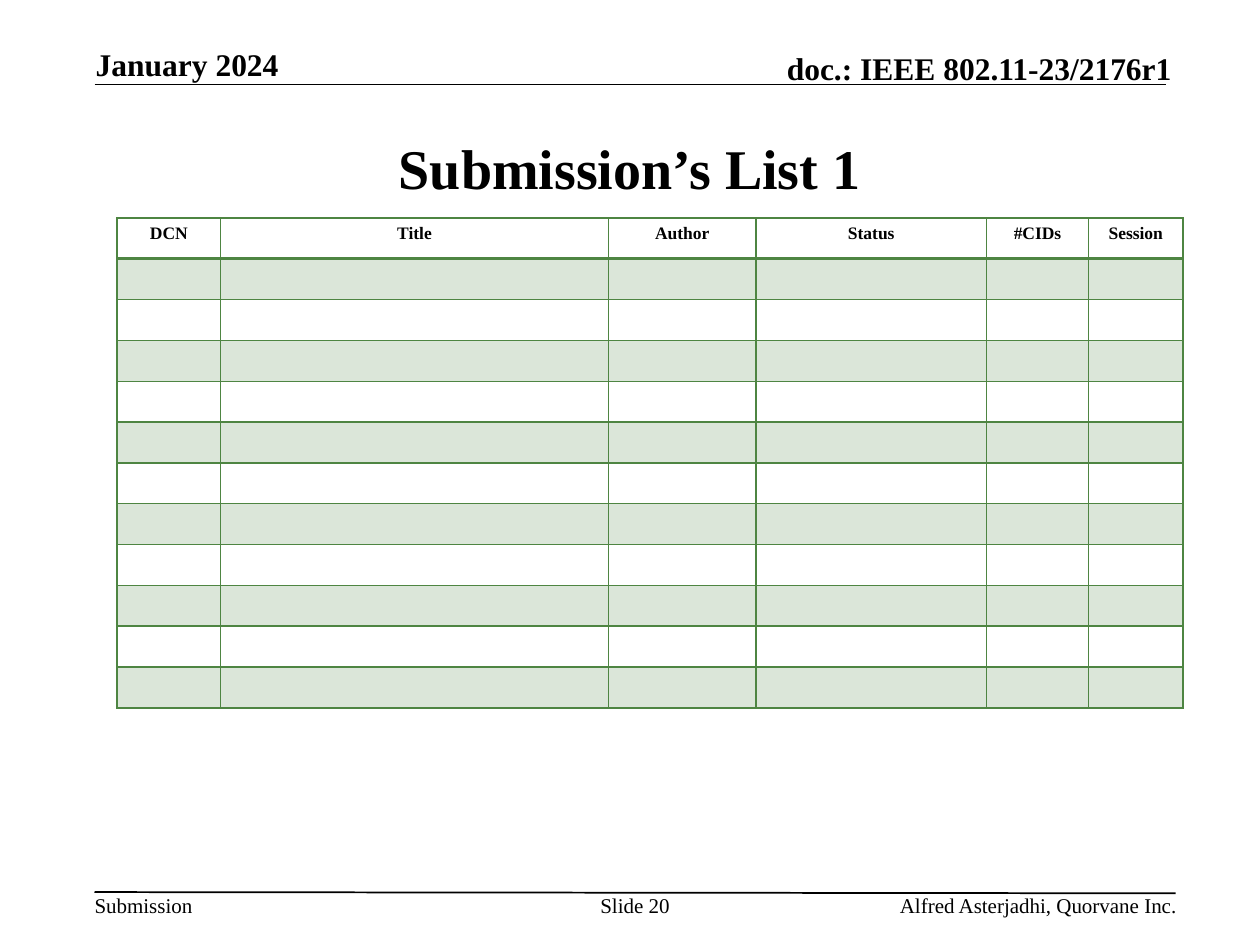
from dataclasses import dataclass

from lxml.etree import SubElement
from pptx import Presentation
from pptx.dml.color import RGBColor
from pptx.enum.shapes import MSO_CONNECTOR
from pptx.enum.text import MSO_ANCHOR, PP_ALIGN
from pptx.oxml.ns import qn
from pptx.util import Inches, Pt


@dataclass(frozen=True)
class Theme:
    font: str = "Times New Roman"
    ink: str = "000000"
    green: str = "4E8542"
    band_alpha: int = 20
    title_size: int = 32
    header_size: int = 18
    footer_size: int = 12
    table_size: int = 10
    rule_width: float = 1
    heading_rule_width: float = 2


def set_attributes(target, values):
    for name, value in values.items():
        setattr(target, name, value)


class SlideBuilder:
    def __init__(self, slide, theme):
        self.slide = slide
        self.theme = theme

    def fill_paragraph(self, paragraph, text, size, bold, align):
        paragraph.alignment = align
        run = paragraph.add_run()
        run.text = text
        set_attributes(run.font, {"name": self.theme.font, "size": Pt(size), "bold": bold})
        run.font.color.rgb = RGBColor.from_string(self.theme.ink)

    def text(self, text, box, size, bold=False, align=PP_ALIGN.LEFT,
             anchor=MSO_ANCHOR.TOP, wrap=True):
        shape = self.slide.shapes.add_textbox(*map(Inches, box))
        frame_format = {
            "margin_left": 0, "margin_right": 0, "margin_top": 0, "margin_bottom": 0,
            "word_wrap": wrap, "vertical_anchor": anchor,
        }
        set_attributes(shape.text_frame, frame_format)
        self.fill_paragraph(shape.text_frame.paragraphs[0], text, size, bold, align)

    def line(self, start, end):
        connector = self.slide.shapes.add_connector(
            MSO_CONNECTOR.STRAIGHT, *map(Inches, start + end))
        connector.line.color.rgb = RGBColor.from_string(self.theme.ink)
        connector.line.width = Pt(self.theme.rule_width)
        SubElement(connector._element.spPr, qn("a:effectLst"))

    def border(self, cell, side, width):
        properties = cell._tc.get_or_add_tcPr()
        line = SubElement(properties, qn(f"a:ln{side}"), w=str(Pt(width)))
        fill = SubElement(line, qn("a:solidFill"))
        SubElement(fill, qn("a:srgbClr"), val=self.theme.green)

    def shade(self, cell, banded):
        if not banded:
            cell.fill.background()
            return
        cell.fill.solid()
        cell.fill.fore_color.rgb = RGBColor.from_string(self.theme.green)
        color = cell._tc.tcPr.find(qn("a:solidFill")).find(qn("a:srgbClr"))
        SubElement(color, qn("a:alpha"), val=str(self.theme.band_alpha * 1000))

    def table(self, headings, widths, row_count, box):
        theme = self.theme
        table = self.slide.shapes.add_table(
            row_count, len(headings), *map(Inches, box)).table
        set_attributes(table, {"first_row": False, "horz_banding": False})
        for column, width in zip(table.columns, widths):
            column.width = Inches(width)
        for row_index, row in enumerate(table.rows):
            top = theme.heading_rule_width if row_index == 1 else theme.rule_width
            bottom = theme.heading_rule_width if row_index == 0 else theme.rule_width
            sides = {"L": theme.rule_width, "R": theme.rule_width, "T": top, "B": bottom}
            for cell, heading in zip(row.cells, headings):
                for side, width in sides.items():
                    self.border(cell, side, width)
                self.shade(cell, banded=row_index % 2 == 1)
                paragraph = cell.text_frame.paragraphs[0]
                if row_index == 0:
                    self.fill_paragraph(paragraph, heading, theme.table_size, True,
                                        PP_ALIGN.CENTER)
                else:
                    SubElement(paragraph._p, qn("a:endParaRPr"),
                               sz=str(theme.table_size * 100))


def main():
    presentation = Presentation()
    set_attributes(presentation, {"slide_width": Inches(10), "slide_height": Inches(7.5)})
    theme = Theme()
    slide = presentation.slides.add_slide(presentation.slide_layouts[6])
    builder = SlideBuilder(slide, theme)

    builder.line((0.75, 0.67), (9.25, 0.67))
    builder.line((0.75, 7.08), (9.33, 7.09))

    header = {"size": theme.header_size, "bold": True, "anchor": MSO_ANCHOR.BOTTOM}
    builder.text("January 2024", (0.76, 0.36, 2.05, 0.3), **header)
    builder.text("doc.: IEEE 802.11-23/2176r1", (5.47, 0.39, 3.83, 0.3),
                 align=PP_ALIGN.RIGHT, **header)

    builder.text("Submission’s List 1", (0.75, 0.75, 8.5, 1.16), theme.title_size,
                 bold=True, align=PP_ALIGN.CENTER, anchor=MSO_ANCHOR.MIDDLE)

    builder.table(
        headings=("DCN", "Title", "Author", "Status", "#CIDs", "Session"),
        widths=(0.82, 3.08, 1.17, 1.83, 0.81, 0.75),
        row_count=12,
        box=(0.93, 1.73, 8.46, 3.89),
    )

    builder.text("Submission", (0.75, 7.08, 0.78, 0.2), theme.footer_size, wrap=False)
    builder.text("Slide 20", (4.75, 7.08, 0.58, 0.4), theme.footer_size,
                 align=PP_ALIGN.CENTER)
    builder.text("Alfred Asterjadhi, Quorvane Inc.", (5.86, 7.08, 3.48, 0.2),
                 theme.footer_size, align=PP_ALIGN.RIGHT)

    presentation.save("out.pptx")


if __name__ == "__main__":
    main()
